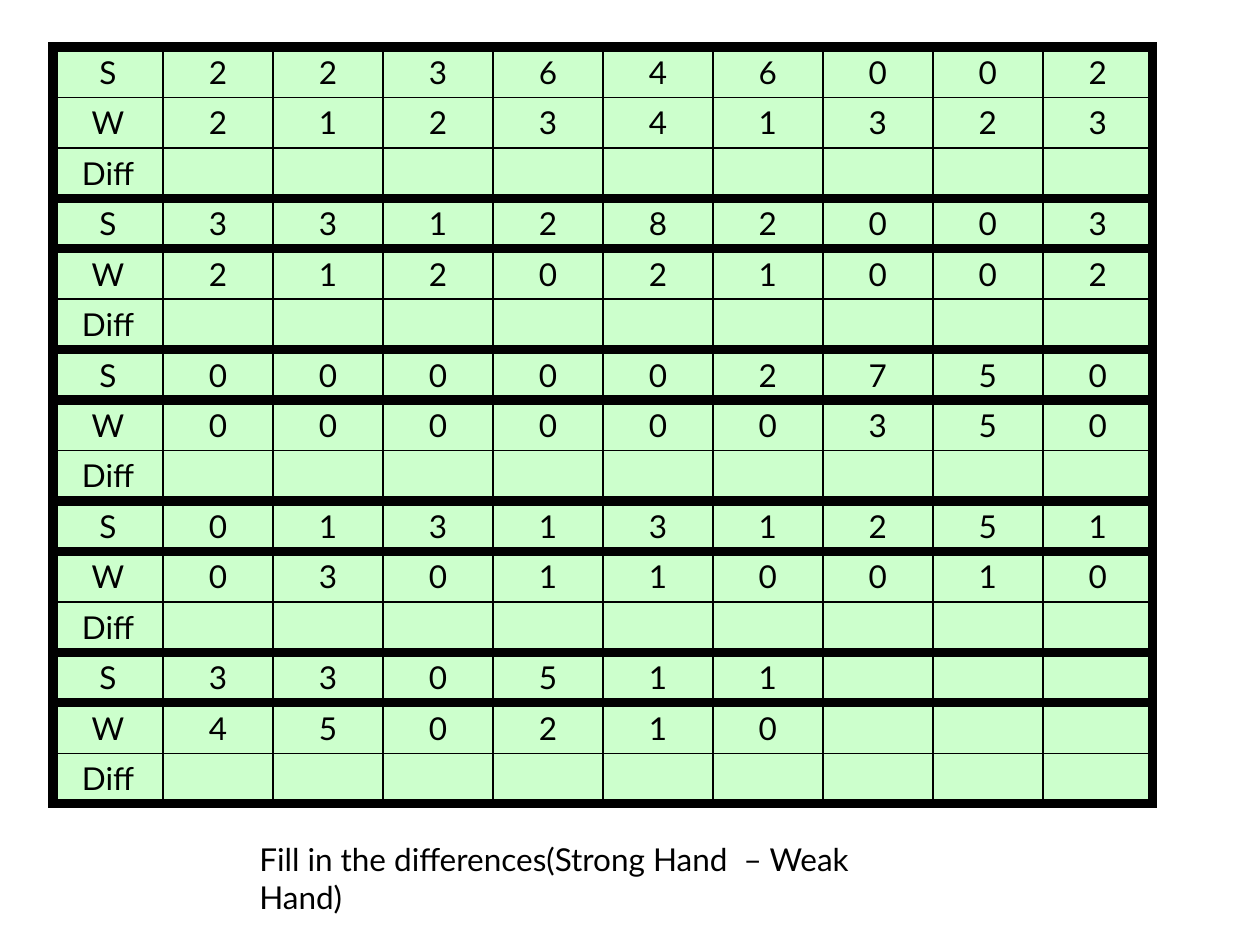
from lxml.etree import SubElement
from pptx import Presentation
from pptx.dml.color import RGBColor
from pptx.enum.text import PP_ALIGN
from pptx.oxml.ns import qn
from pptx.util import Emu, Pt

PX = 914400 / 126
FONT = "Lato"
BLACK = "000000"
GREEN = "CCFFCC"
THIN, THICK = 1, 6
COLUMNS = 10
SCORES = [
    ("223646002", "212341323"),
    ("331282003", "212021002"),
    ("000002750", "000000350"),
    ("013131251", "030110010"),
    ("330511", "450210"),
]


def px(length):
    """Turn a whole number of pixels into EMU."""
    return Emu(round(length * PX))


def color(value):
    """Turn a hex string into a colour."""
    return RGBColor.from_string(value)


def style_paragraph(paragraph, alignment):
    """Give a paragraph the slide's font and an alignment."""
    paragraph.alignment = alignment
    paragraph.font.name = FONT
    paragraph.font.size = Pt(18)
    paragraph.font.color.rgb = color(BLACK)


def set_borders(cell, widths):
    """Draw the left, right, top and bottom borders in points."""
    properties = cell._tc.get_or_add_tcPr()
    for index, (side, width) in enumerate(zip("LRTB", widths)):
        line = SubElement(properties, qn(f"a:ln{side}"), w=str(Pt(width)))
        fill = SubElement(line, qn("a:solidFill"))
        SubElement(fill, qn("a:srgbClr"), val=BLACK)
        properties.insert(index, line)


def table_rows():
    """List the label and values of every table row."""
    rows = []
    for strong, weak in SCORES:
        rows += [["S", *strong], ["W", *weak], ["Diff"]]
    return [row + [""] * (COLUMNS - len(row)) for row in rows]


def rule_widths(row_count):
    """List the horizontal rule widths, from the top edge to the bottom."""
    return [
        THICK if rule % 3 == 0 or (rule % 3 == 1 and rule > 1) else THIN
        for rule in range(row_count + 1)
    ]


def add_score_table(slide, left, top, column_width, row_height):
    """Add the table of strong and weak hand scores."""
    rows = table_rows()
    rules = rule_widths(len(rows))
    frame = slide.shapes.add_table(
        len(rows), COLUMNS, px(left), px(top),
        px(column_width * COLUMNS), px(row_height * len(rows)),
    )
    table = frame.table
    table.first_row = table.horz_banding = False
    for row_index, row in enumerate(rows):
        for column_index, text in enumerate(row):
            cell = table.cell(row_index, column_index)
            cell.text = text
            cell.fill.solid()
            cell.fill.fore_color.rgb = color(GREEN)
            style_paragraph(cell.text_frame.paragraphs[0], PP_ALIGN.CENTER)
            set_borders(cell, (
                THICK if column_index == 0 else THIN,
                THICK if column_index == COLUMNS - 1 else THIN,
                rules[row_index],
                rules[row_index + 1],
            ))


def add_instruction(slide, text, left, top, width, height):
    """Add the wrapped instruction below the table."""
    text_frame = slide.shapes.add_textbox(
        px(left), px(top), px(width), px(height)
    ).text_frame
    text_frame.word_wrap = True
    text_frame.text = text
    style_paragraph(text_frame.paragraphs[0], PP_ALIGN.LEFT)


def main():
    """Build and save the slide."""
    presentation = Presentation()
    presentation.slide_width = px(1260)
    presentation.slide_height = px(945)
    slide = presentation.slides.add_slide(presentation.slide_layouts[6])
    add_score_table(slide, 53, 47, 110, 50)
    add_instruction(
        slide, "Fill in the differences(Strong Hand  – Weak Hand)",
        247, 834, 690, 88,
    )
    presentation.save("out.pptx")


if __name__ == "__main__":
    main()
